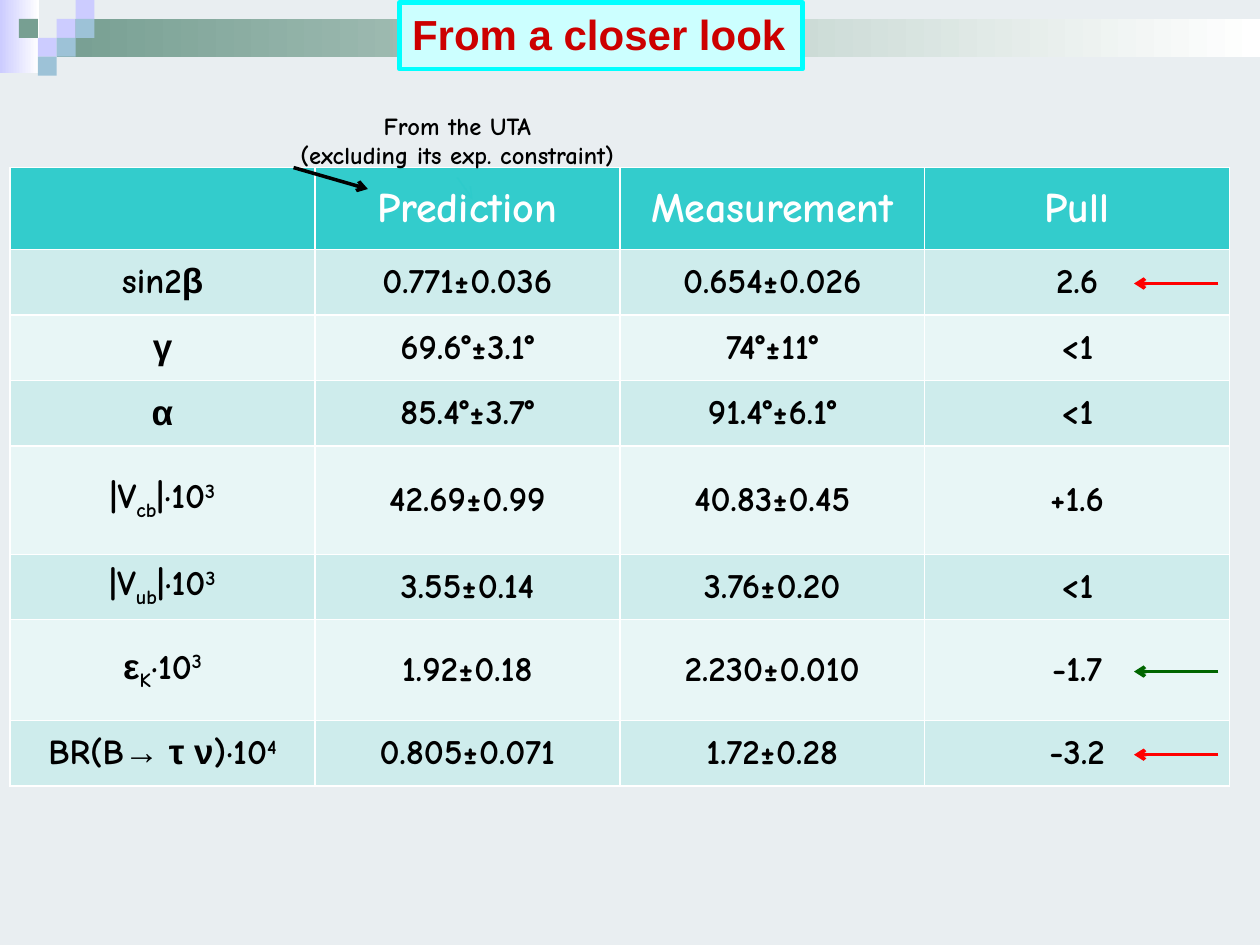
from lxml import etree
from pptx import Presentation
from pptx import util as u
from pptx.dml.color import RGBColor
from pptx.enum import shapes, text
from pptx.oxml.ns import qn

WHITE = RGBColor(0xFF, 0xFF, 0xFF)
BLACK = RGBColor(0, 0, 0)
BACKGROUND = RGBColor(0xE9, 0xEE, 0xF1)
LILAC = RGBColor(0xCC, 0xCC, 0xFF)
SAGE = RGBColor(0x77, 0x9F, 0x92)
SKY = RGBColor(0x9D, 0xC2, 0xD7)
HEADER = RGBColor(0x33, 0xCC, 0xCC)
BANDS = [RGBColor(0xE8, 0xF6, 0xF6), RGBColor(0xCE, 0xEC, 0xEC)]
TITLE_FILL = RGBColor(0xCC, 0xFF, 0xFF)
CYAN = RGBColor(0, 0xFF, 0xFF)
TITLE_RED = RGBColor(0xCC, 0, 0)
RED = RGBColor(0xFF, 0, 0)
GREEN = RGBColor(0, 0x66, 0)
TEAL = RGBColor(0x2E, 0xCB, 0xCB)

BODY_FONT, GREEK_FONT = "Comic Neue", "Arial"
SUB, SUP = -25, 30
SQUARE = 0.15
COL_WIDTH = 2.42
ROW_HEIGHTS = [0.65, 0.52, 0.52, 0.52, 0.86, 0.52, 0.8, 0.52]
HEADINGS = ["", "Prediction", "Measurement", "Pull"]
RESULTS = [
    ([("sin2", 0), ("β", 0)], "0.771±0.036", "0.654±0.026", "2.6"),
    ([("γ", 0)], "69.6°±3.1°", "74°±11°", "<1"),
    ([("α", 0)], "85.4°±3.7°", "91.4°±6.1°", "<1"),
    ([("|V", 0), ("cb", SUB), ("|·10", 0), ("3", SUP)], "42.69±0.99", "40.83±0.45", "+1.6"),
    ([("|V", 0), ("ub", SUB), ("|·10", 0), ("3", SUP)], "3.55±0.14", "3.76±0.20", "<1"),
    ([("ε", 0), ("K", SUB), ("·10", 0), ("3", SUP)], "1.92±0.18", "2.230±0.010", "-1.7"),
    ([("BR(B", 0), ("→ τ ν", 0), (")·10", 0), ("4", SUP)], "0.805±0.071", "1.72±0.28", "-3.2"),
]
PULL_ARROWS = {1: RED, 7: RED, 6: GREEN}


def style(font, name, size, color):
    font.name, font.size, font.bold = name, u.Pt(size), True
    font.color.rgb = color


def add_rect(s, left, top, width, height, color, fade_to=None):
    sp = s.shapes.add_shape(shapes.MSO_SHAPE.RECTANGLE, *map(u.Inches, (left, top, width, height)))
    sp.shadow.inherit = False
    sp.line.fill.background()
    if fade_to is None:
        sp.fill.solid()
        sp.fill.fore_color.rgb = color
    else:
        sp.fill.gradient()
        sp.fill.gradient_angle = 0
        for stop, c, position in zip(sp.fill.gradient_stops, (color, fade_to), (0, 1)):
            stop.color.rgb = c
            stop.position = position


def add_arrow(s, start, end, color, width=2):
    line = s.shapes.add_connector(shapes.MSO_CONNECTOR.STRAIGHT, *map(u.Inches, (*start, *end)))
    line.line.color.rgb = color
    line.line.width = u.Pt(width)
    etree.SubElement(line.line._get_or_add_ln(), qn("a:tailEnd"), type="arrow")
    etree.SubElement(line._element.spPr, qn("a:effectLst"))


def add_banner(s, width):
    add_rect(s, 0, 0, 0.31, 0.58, LILAC, WHITE)
    add_rect(s, 3 * SQUARE, SQUARE, width - 3 * SQUARE, 2 * SQUARE, SAGE, WHITE)
    for col, row, color in [(3, 1, LILAC), (4, 0, LILAC), (4, 1, SKY), (2, 2, LILAC),
                            (1, 1, SAGE), (3, 2, SKY), (2, 3, SKY)]:
        add_rect(s, col * SQUARE, row * SQUARE, SQUARE, SQUARE, color)


def add_title(s, left, top, width, height):
    sp = s.shapes.title
    s.shapes._spTree.append(sp._element)
    sp.left, sp.top, sp.width, sp.height = map(u.Inches, (left, top, width, height))
    sp.fill.solid()
    sp.fill.fore_color.rgb = TITLE_FILL
    sp.line.color.rgb = CYAN
    sp.line.width = u.Pt(2.5)
    tf = sp.text_frame
    tf.text = "From a closer look"
    tf.word_wrap = False
    tf.auto_size = text.MSO_AUTO_SIZE.NONE
    tf.vertical_anchor = text.MSO_ANCHOR.TOP
    p = tf.paragraphs[0]
    p.alignment = text.PP_ALIGN.LEFT
    style(p.runs[0].font, "Arial", 24, TITLE_RED)


def fill_cell(cell, pieces, size, color, fill):
    cell.fill.solid()
    cell.fill.fore_color.rgb = fill
    cell.vertical_anchor = text.MSO_ANCHOR.MIDDLE
    p = cell.text_frame.paragraphs[0]
    p.alignment = text.PP_ALIGN.CENTER
    for words, baseline in pieces:
        r = p.add_run()
        r.text = words
        greek = any("α" <= ch <= "ω" for ch in words)
        style(r.font, GREEK_FONT if greek else BODY_FONT, size, color)
        if baseline:
            r.font._element.set("baseline", f"{baseline * 1000}")


def add_results(s, left, top):
    width = COL_WIDTH * len(HEADINGS)
    frame = s.shapes.add_table(len(ROW_HEIGHTS), len(HEADINGS),
                               *map(u.Inches, (left, top, width, sum(ROW_HEIGHTS))))
    table = frame.table
    for column in table.columns:
        column.width = u.Inches(COL_WIDTH)
    for row, height in zip(table.rows, ROW_HEIGHTS):
        row.height = u.Inches(height)
    for cell, heading in zip(table.rows[0].cells, HEADINGS):
        fill_cell(cell, [(heading, 0)] if heading else [], 24, WHITE, HEADER)
    for i, (label, *values) in enumerate(RESULTS, 1):
        for cell, pieces in zip(table.rows[i].cells, [label] + [[(v, 0)] for v in values]):
            fill_cell(cell, pieces, 20, BLACK, BANDS[i % 2])
    right = left + width - 0.09
    for i, color in PULL_ARROWS.items():
        y = top + sum(ROW_HEIGHTS[:i]) + ROW_HEIGHTS[i] / 2 + 0.01
        add_arrow(s, (right, y), (right - 0.67, y), color)


def add_prediction_note(s, left, top, width, height):
    tf = s.shapes.add_textbox(*map(u.Inches, (left, top, width, height))).text_frame
    tf.word_wrap = False
    tf.text = "From the UTA\n(excluding its exp. constraint)"
    for p in tf.paragraphs:
        p.alignment = text.PP_ALIGN.CENTER
        style(p.runs[0].font, BODY_FONT, 14, BLACK)
    bottom = top + height
    middle = left + width / 2
    add_arrow(s, (middle, bottom + 0.01), (middle + 0.12, bottom + 0.18), TEAL, 0.75)
    add_arrow(s, (left + 0.24, bottom - 0.07), (left + 0.83, bottom + 0.1), BLACK)


def main():
    prs = Presentation()
    prs.slide_width, prs.slide_height = u.Inches(10), u.Inches(7.5)
    s = prs.slides.add_slide(prs.slide_layouts[5])
    s.background.fill.solid()
    s.background.fill.fore_color.rgb = BACKGROUND
    add_banner(s, 10)
    add_title(s, 3.17, 0.02, 3.2, 0.53)
    add_results(s, 0.08, 1.33)
    add_prediction_note(s, 2.09, 0.83, 3.08, 0.57)
    prs.save("out.pptx")


if __name__ == "__main__":
    main()
